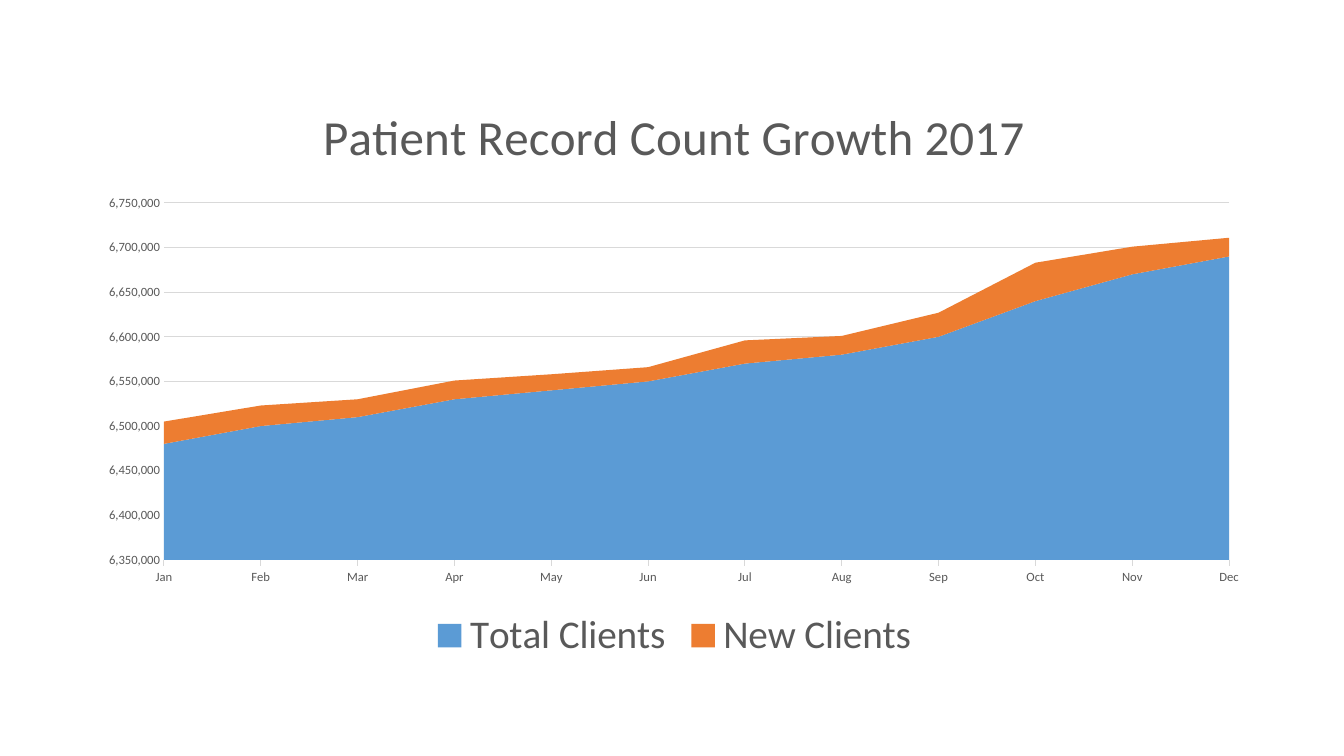
from lxml import etree
from pptx import Presentation
from pptx.chart.data import CategoryChartData
from pptx.dml.color import RGBColor
from pptx.enum.chart import XL_CHART_TYPE, XL_LEGEND_POSITION, XL_TICK_MARK
from pptx.oxml.ns import qn
from pptx.util import Inches, Pt

AREA_STACKED = XL_CHART_TYPE.AREA_STACKED
BOTTOM = XL_LEGEND_POSITION.BOTTOM
OUTSIDE = XL_TICK_MARK.OUTSIDE
NO_TICKS = XL_TICK_MARK.NONE

TEXT_GRAY = "595959"
LINE_GRAY = "D9D9D9"
SERIES_COLORS = ["5B9BD5", "ED7D31"]
MONTHS = ["Jan", "Feb", "Mar", "Apr", "May", "Jun",
          "Jul", "Aug", "Sep", "Oct", "Nov", "Dec"]
TOTAL_CLIENTS = [6480000, 6500000, 6510000, 6530000, 6540000, 6550000,
                 6570000, 6580000, 6600000, 6640000, 6670000, 6690000]
NEW_CLIENTS = [25000, 23000, 20000, 21000, 18000, 16000,
               26000, 21000, 27000, 43000, 31000, 21000]
PLOT_AREA = {"x": 0.0665, "y": 0.214, "w": 0.9045, "h": 0.6045}


def format_font(font, size, color=TEXT_GRAY, name="Calibri"):
    font.size = Pt(size)
    font.bold = False
    font.name = name
    font.color.rgb = RGBColor.from_string(color)


presentation = Presentation()
presentation.slide_width = Inches(13.33)
presentation.slide_height = Inches(7.5)
slide = presentation.slides.add_slide(presentation.slide_layouts[6])

chart_data = CategoryChartData(number_format="#,##0")
chart_data.categories = MONTHS
chart_data.add_series("Total Clients", TOTAL_CLIENTS)
chart_data.add_series("New Clients", NEW_CLIENTS)
chart = slide.shapes.add_chart(
    AREA_STACKED, Inches(0.85), Inches(0.76), Inches(11.68), Inches(5.86), chart_data
).chart
format_font(chart.font, 10, "000000")

chart.has_title = True
title_frame = chart.chart_title.text_frame
title_frame.text = "Patient Record Count Growth 2017"
format_font(title_frame.paragraphs[0].runs[0].font, 35)
chart.chart_title.include_in_layout = False

chart.has_legend = True
chart.legend.position = BOTTOM
chart.legend.include_in_layout = False
format_font(chart.legend.font, 28)

plot = chart.plots[0]
plot.vary_by_categories = False
for series, color in zip(plot.series, SERIES_COLORS):
    series.format.fill.solid()
    series.format.fill.fore_color.rgb = RGBColor.from_string(color)
    series.format.line.fill.background()

category_axis = chart.category_axis
category_axis.major_tick_mark = OUTSIDE
value_axis = chart.value_axis
value_axis.major_tick_mark = NO_TICKS
value_axis.minimum_scale = 6350000
value_axis.maximum_scale = 6750000
value_axis.major_unit = 50000
value_axis.has_major_gridlines = True
value_axis.tick_labels.number_format = "#,##0"
value_axis.tick_labels.number_format_is_linked = False
value_axis.format.line.fill.background()

for axis in (category_axis, value_axis):
    axis.minor_tick_mark = NO_TICKS
    format_font(axis.tick_labels.font, 9)
for line in (category_axis.format.line, value_axis.major_gridlines.format.line):
    line.color.rgb = RGBColor.from_string(LINE_GRAY)
    line.width = Pt(0.75)

chart_root = chart.element
chart_root.find(".//" + qn("c:crossBetween")).set("val", "midCat")
plot_area = chart_root.find(".//" + qn("c:plotArea"))
layout = plot_area.find(qn("c:layout"))
if layout is None:
    layout = etree.Element(qn("c:layout"))
    plot_area.insert(0, layout)
manual_layout = etree.SubElement(layout, qn("c:manualLayout"))
layout_settings = {"layoutTarget": "inner", "xMode": "edge", "yMode": "edge", **PLOT_AREA}
for key, value in layout_settings.items():
    etree.SubElement(manual_layout, qn(f"c:{key}")).set("val", str(value))

presentation.save("out.pptx")
